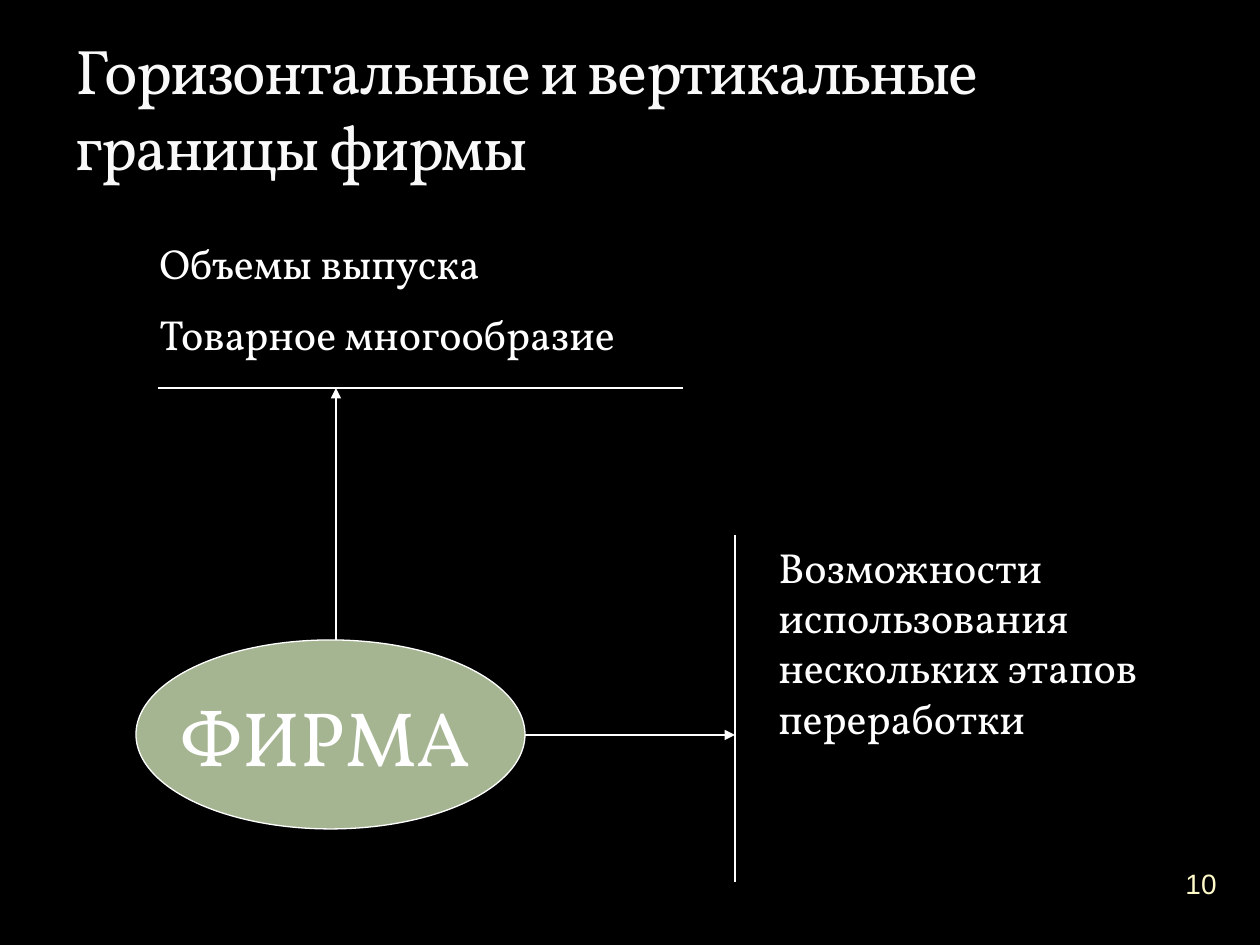
from dataclasses import dataclass

from lxml import etree
from pptx import Presentation
from pptx.dml.color import RGBColor
from pptx.enum.shapes import MSO_CONNECTOR, MSO_SHAPE
from pptx.enum.text import MSO_ANCHOR, PP_ALIGN
from pptx.oxml.ns import qn
from pptx.util import Emu, Pt

STRAIGHT, OVAL = MSO_CONNECTOR.STRAIGHT, MSO_SHAPE.OVAL
TOP, MIDDLE, BOTTOM = MSO_ANCHOR.TOP, MSO_ANCHOR.MIDDLE, MSO_ANCHOR.BOTTOM
LEFT, CENTER = PP_ALIGN.LEFT, PP_ALIGN.CENTER
PX = 914400 // 126


@dataclass(frozen=True)
class Theme:
    background: RGBColor = RGBColor(0, 0, 0)
    title: RGBColor = RGBColor(0xF9, 0xF9, 0xF9)
    text: RGBColor = RGBColor(0xFF, 0xFF, 0xFF)
    number: RGBColor = RGBColor(0xFE, 0xFA, 0xC9)
    firm: RGBColor = RGBColor(0xA5, 0xB5, 0x92)
    font: str = "Vollkorn"
    number_font: str = "Arial"
    title_size: int = 36
    firm_size: int = 44
    body_size: int = 24
    number_size: int = 16
    line_width: float = 0.75


THEME = Theme()

# Content
TITLE = ["Горизонтальные и вертикальные границы фирмы"]
FIRM = ["ФИРМА"]
HORIZONTAL = ["Объемы выпуска", "Товарное многообразие"]
VERTICAL = ["Возможности использования нескольких этапов переработки"]
PAGE_NUMBER = ["10"]

# Places in px: left, top, width, height
TITLE_BOX = (63, 21, 1134, 168)
FIRM_OVAL = (136, 640, 389, 189)
FIRM_BOX = (168, 683, 325, 105)
HORIZONTAL_BOX = (147, 231, 829, 139)
VERTICAL_BOX = (766, 535, 431, 217)
NUMBER_BOX = (1159, 852, 84, 63)

# Boundary lines, and the place where the upward arrow leaves the oval
HORIZONTAL_LINE = {"left": 158, "right": 683, "y": 388}
VERTICAL_LINE = {"x": 735, "top": 535, "bottom": 882}
UP_ARROW_X = 336


def px(value):
    return Emu(value * PX)


def add_text(slide, box, paragraphs, *, size=THEME.body_size, color=THEME.text,
             font=THEME.font, anchor=TOP, align=LEFT, inset=None, spacing=None):
    frame = slide.shapes.add_textbox(*map(px, box)).text_frame
    frame.word_wrap = True
    frame.vertical_anchor = anchor
    if inset is not None:
        frame.margin_left = frame.margin_right = px(inset)
        frame.margin_top = frame.margin_bottom = px(inset)
    for index, text in enumerate(paragraphs):
        paragraph = frame.add_paragraph() if index else frame.paragraphs[0]
        paragraph.alignment = align
        if index:
            paragraph.space_before = Pt(size / 2)
        run = paragraph.add_run()
        run.text = text
        run.font.name = font
        run.font.size = Pt(size)
        run.font.color.rgb = color
        if spacing is not None:
            run.font._element.set("spc", str(spacing * 100))


def style_line(line):
    line.color.rgb = THEME.text
    line.width = Pt(THEME.line_width)


def add_line(slide, start, end, arrow=False):
    connector = slide.shapes.add_connector(STRAIGHT, *map(px, start + end))
    style_line(connector.line)
    if arrow:
        outline = connector.line._get_or_add_ln()
        etree.SubElement(outline, qn("a:tailEnd"), type="triangle")
    etree.SubElement(connector._element.spPr, qn("a:effectLst"))


def add_firm(slide):
    oval = slide.shapes.add_shape(OVAL, *map(px, FIRM_OVAL))
    oval.shadow.inherit = False
    oval.fill.solid()
    oval.fill.fore_color.rgb = THEME.firm
    style_line(oval.line)
    add_text(slide, FIRM_BOX, FIRM, size=THEME.firm_size)


def add_boundaries(slide):
    left, top, width, height = FIRM_OVAL
    line_y, line_x = HORIZONTAL_LINE["y"], VERTICAL_LINE["x"]
    middle = top + height // 2 + 1

    # Arrows from the firm to its boundaries
    add_line(slide, (UP_ARROW_X, top), (UP_ARROW_X, line_y), arrow=True)
    add_line(slide, (left + width, middle), (line_x, middle), arrow=True)

    # The boundaries themselves
    add_line(slide, (HORIZONTAL_LINE["left"], line_y),
             (HORIZONTAL_LINE["right"], line_y))
    add_line(slide, (line_x, VERTICAL_LINE["top"]),
             (line_x, VERTICAL_LINE["bottom"]))


def main():
    presentation = Presentation()
    presentation.slide_width, presentation.slide_height = px(1260), px(945)
    slide = presentation.slides.add_slide(presentation.slide_layouts[6])
    slide.background.fill.solid()
    slide.background.fill.fore_color.rgb = THEME.background

    # Page number and title
    add_text(slide, NUMBER_BOX, PAGE_NUMBER, size=THEME.number_size,
             color=THEME.number, font=THEME.number_font, anchor=MIDDLE,
             align=CENTER, inset=0)
    add_text(slide, TITLE_BOX, TITLE, size=THEME.title_size,
             color=THEME.title, anchor=BOTTOM, spacing=-1)

    # Diagram and its captions
    add_firm(slide)
    add_boundaries(slide)
    add_text(slide, HORIZONTAL_BOX, HORIZONTAL)
    add_text(slide, VERTICAL_BOX, VERTICAL)

    presentation.save("out.pptx")


if __name__ == "__main__":
    main()
